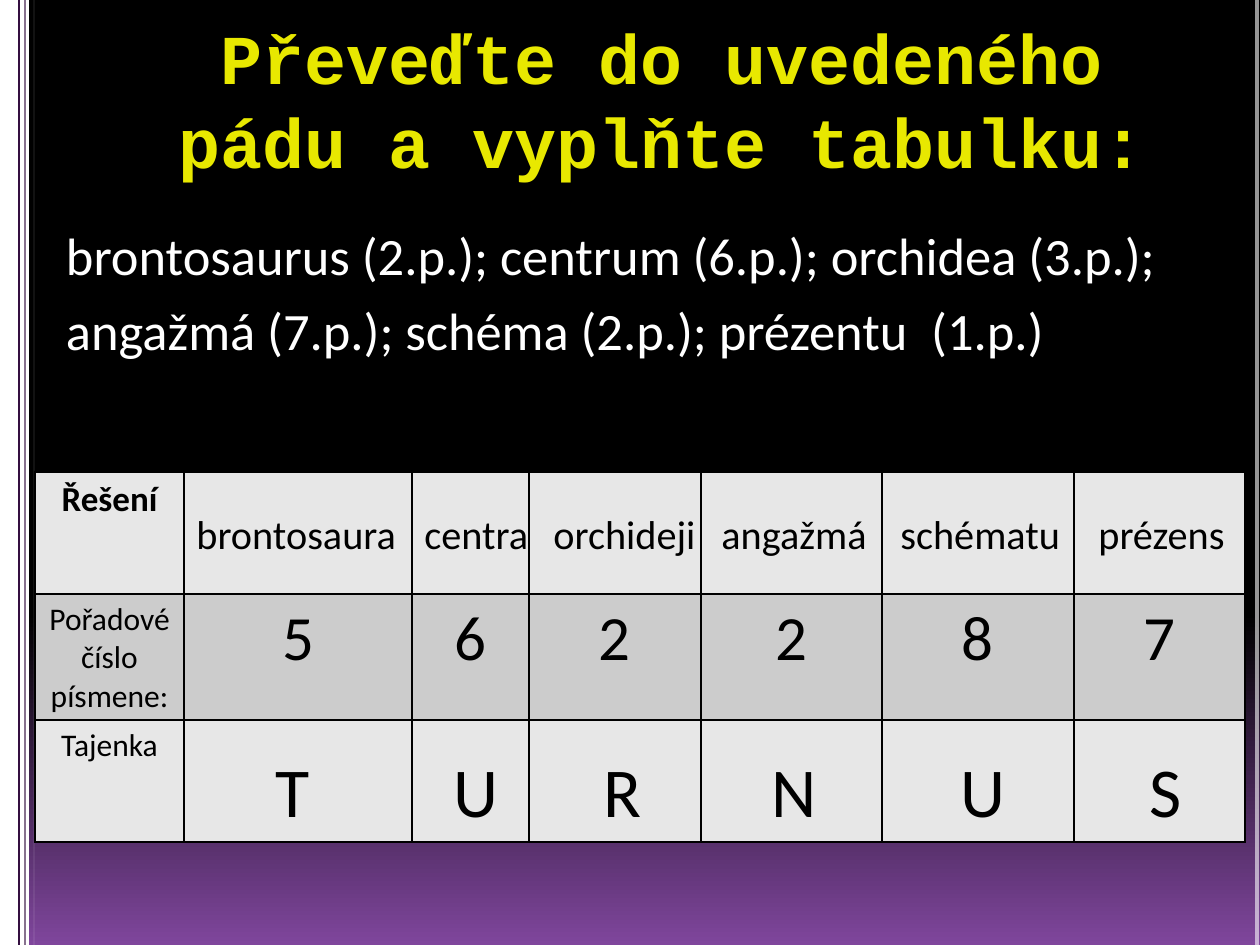
import pptx
import pptx.util
import pptx.dml.color
import pptx.enum.shapes
import pptx.enum.text
import pptx.oxml
import lxml.etree

SCALE = 914400 / 126
NS = "http://schemas.openxmlformats.org/drawingml/2006/main"
CENTER = pptx.enum.text.PP_ALIGN.CENTER


def px(size):
    return pptx.util.Emu(round(size * SCALE))


def color(code):
    return pptx.dml.color.RGBColor.from_string(code)


class Page:
    face = "Calibri"
    ink = "000000"

    def __init__(self, deck):
        self.slide = deck.slides.add_slide(deck.slide_layouts[6])
        self.shapes = self.slide.shapes

    def back(self, stops, angle):
        fill = self.slide.background.fill
        fill.gradient()
        fill.gradient_angle = angle
        for stop, (place, code) in zip(fill.gradient_stops, stops):
            stop.position = place
            stop.color.rgb = color(code)

    def rect(self, x, y, w, h, code):
        kind = pptx.enum.shapes.MSO_SHAPE.RECTANGLE
        shape = self.shapes.add_shape(kind, px(x), px(y), px(w), px(h))
        shape.shadow.inherit = False
        shape.fill.solid()
        shape.fill.fore_color.rgb = color(code)
        shape.line.fill.background()

    def rule(self, x, high, code, width, alpha):
        kind = pptx.enum.shapes.MSO_CONNECTOR.STRAIGHT
        line = self.shapes.add_connector(kind, px(x), 0, px(x), px(high))
        line.line.color.rgb = color(code)
        line.line.width = pptx.util.Pt(width)
        props = line._element.spPr
        tint = props.find(f".//{{{NS}}}srgbClr")
        lxml.etree.SubElement(tint, f"{{{NS}}}alpha", val=str(alpha * 1000))
        lxml.etree.SubElement(props, f"{{{NS}}}effectLst")

    def style(self, para, size, code=ink, face=face, bold=False):
        para.font.size = pptx.util.Pt(size)
        para.font.name = face
        para.font.bold = bold
        para.font.color.rgb = color(code)

    def text(self, x, y, w, h, lines, size, wrap=True, align=None,
             middle=False, inset=None, gap=None, **look):
        frame = self.shapes.add_textbox(px(x), px(y), px(w), px(h)).text_frame
        frame.word_wrap = wrap
        if not wrap:
            frame.auto_size = pptx.enum.text.MSO_AUTO_SIZE.SHAPE_TO_FIT_TEXT
        if middle:
            frame.vertical_anchor = pptx.enum.text.MSO_ANCHOR.MIDDLE
        if inset is not None:
            frame.margin_left = px(inset)
        frame.text = "\n".join(lines)
        for para in frame.paragraphs:
            para.alignment = align
            if gap is not None:
                para.space_before = pptx.util.Pt(gap)
            self.style(para, size, **look)

    def edge(self, cell):
        props = cell._tc.get_or_add_tcPr()
        for side in ("lnL", "lnR", "lnT", "lnB"):
            props.append(pptx.oxml.parse_xml(
                f'<a:{side} xmlns:a="{NS}" w="12700"><a:solidFill>'
                f'<a:srgbClr val="{self.ink}"/></a:solidFill></a:{side}>'))

    def table(self, x, y, cols, high, rows, fills, head):
        grid = self.shapes.add_table(
            len(rows), len(cols), px(x), px(y),
            px(sum(cols)), px(high * len(rows))).table
        for col, wide in zip(grid.columns, cols):
            col.width = px(wide)
        for r, (row, fill) in enumerate(zip(rows, fills)):
            grid.rows[r].height = px(high)
            for c in range(len(cols)):
                cell = grid.cell(r, c)
                self.edge(cell)
                cell.fill.solid()
                cell.fill.fore_color.rgb = color(fill)
                cell.text = row[c] if c < len(row) else ""
                para = cell.text_frame.paragraphs[0]
                para.alignment = CENTER
                size = 36 if c and cell.text else 20 if r == 0 else 18
                self.style(para, size, bold=r == 0 and c == 0)
        grid.first_row = head


def main():
    deck = pptx.Presentation()
    deck.slide_width, deck.slide_height = px(1260), px(945)
    page = Page(deck)
    page.back([(0.65, "000000"), (1, "7F469C")], 270)

    page.rect(0, 0, 29, 945, "FFFFFF")
    for x, code, width, alpha in [
            (19, "340F40", 1, 100), (25, "340F40", 1, 59),
            (34, "FFFFFF", 0.25, 59), (1257, "FFFFFF", 2.25, 59)]:
        page.rule(x, 945, code, width, alpha)

    page.text(126, 0, 1071, 197,
              ["Převeďte do uvedeného pádu a vyplňte tabulku:"], 40,
              align=CENTER, middle=True,
              code="E8E800", face="Courier New", bold=True)
    page.text(44, 217, 1216, 659,
              ["brontosaurus (2.p.); centrum (6.p.); orchidea (3.p.);",
               "angažmá (7.p.); schéma (2.p.); prézentu  (1.p.)"], 30,
              inset=22, gap=7, code="FFFFFF")

    page.table(35, 472, [149, 228, 117, 172, 181, 192, 171], 122,
               [["Řešení"],
                ["Pořadové číslo písmene:", "5", "6", "2", "2", "8", "7"],
                ["Tajenka"]],
               ["E7E7E7", "CCCCCC", "E7E7E7"], False)

    for x, w, word in [
            (184, 231, "brontosaura"), (412, 132, "centra"),
            (541, 171, "orchideji"), (709, 180, "angažmá"),
            (888, 190, "schématu"), (1086, 158, "prézens")]:
        page.text(x, 503, w, 62, [word], 23, wrap=False)
    for x, w, sign in [
            (263, 64, "T"), (441, 73, "U"), (591, 67, "R"),
            (759, 74, "N"), (948, 73, "U"), (1137, 64, "S")]:
        page.text(x, 741, w, 97, [sign], 40, wrap=False)

    deck.save("out.pptx")


if __name__ == "__main__":
    main()
